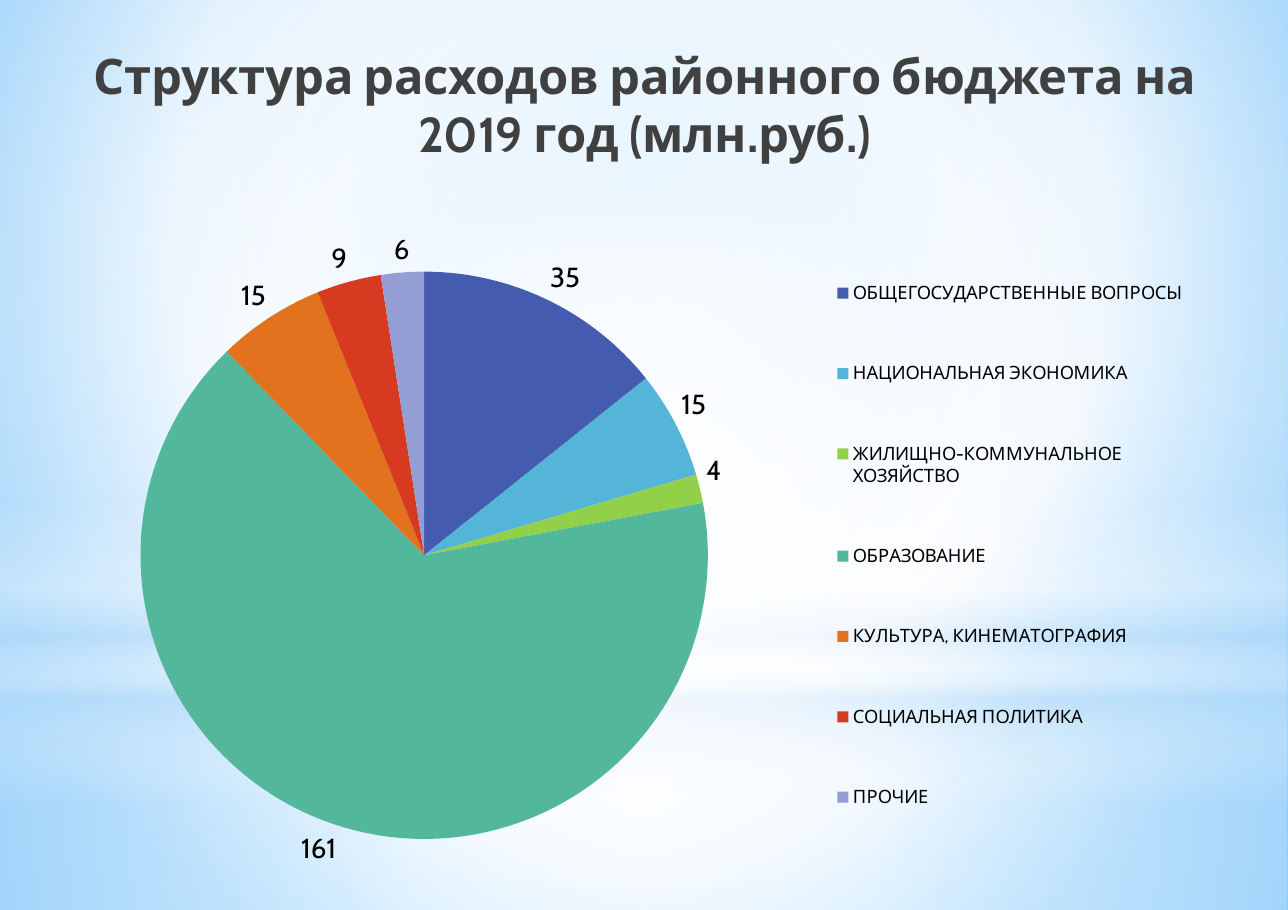
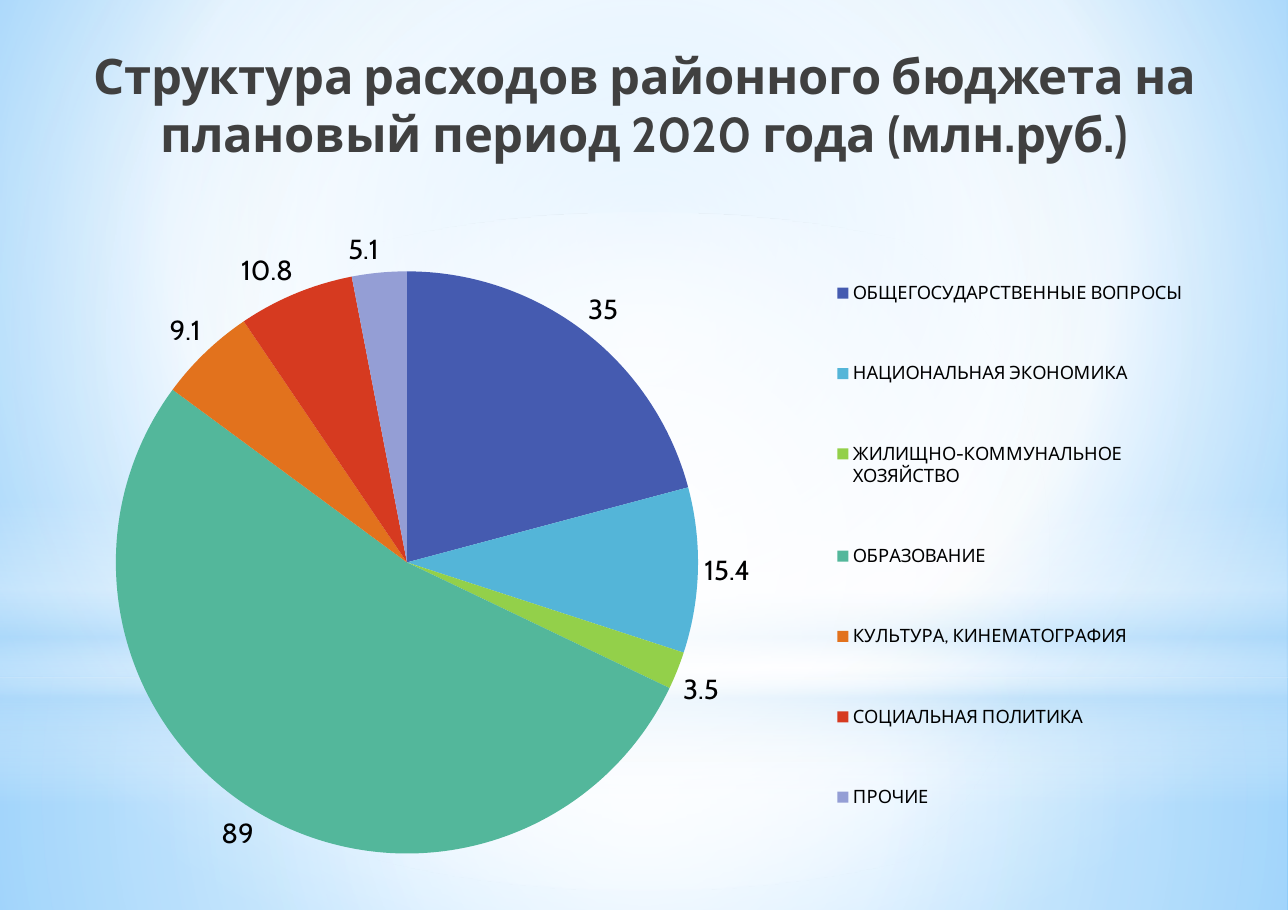
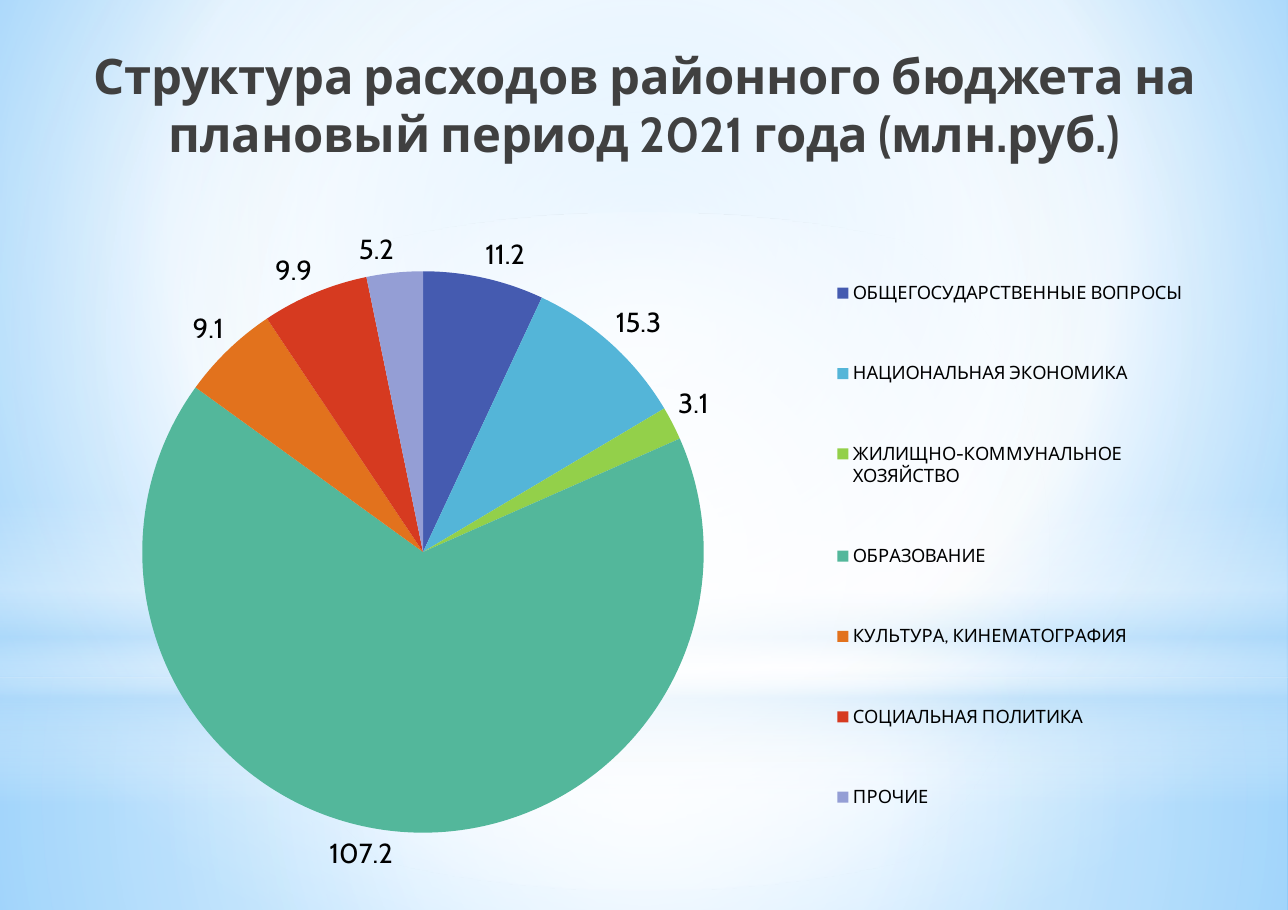
from lxml import etree
from pptx import Presentation
from pptx.chart.data import CategoryChartData
from pptx.dml.color import RGBColor
from pptx.enum.chart import XL_CHART_TYPE, XL_LABEL_POSITION, XL_LEGEND_POSITION
from pptx.enum.shapes import MSO_SHAPE
from pptx.enum.text import MSO_ANCHOR, PP_ALIGN
from pptx.oxml.ns import qn
from pptx.util import Inches, Pt

PIE = XL_CHART_TYPE.PIE
OUTSIDE = XL_LABEL_POSITION.OUTSIDE_END
RIGHT = XL_LEGEND_POSITION.RIGHT
RECT, OVAL = MSO_SHAPE.RECTANGLE, MSO_SHAPE.OVAL
MIDDLE, CENTER = MSO_ANCHOR.MIDDLE, PP_ALIGN.CENTER

FONT = "Cabin"
WIDE, HIGH = 11.69, 8.26
COLORS = {
    "title": "404040", "text": "000000", "white": "FFFFFF",
    "pale": "B4DCFA", "sky": "9ED5FF", "blue": "5BB9FF",
}

# Spending groups and their slice colours
GROUPS = {
    "ОБЩЕГОСУДАРСТВЕННЫЕ ВОПРОСЫ": "455BB0",
    "НАЦИОНАЛЬНАЯ ЭКОНОМИКА": "54B5D8",
    "ЖИЛИЩНО-КОММУНАЛЬНОЕ ХОЗЯЙСТВО": "93D04A",
    "ОБРАЗОВАНИЕ": "53B79B",
    "КУЛЬТУРА, КИНЕМАТОГРАФИЯ": "E2721D",
    "СОЦИАЛЬНАЯ ПОЛИТИКА": "D63A20",
    "ПРОЧИЕ": "949ED5",
}

# Title ending and values for each year
YEARS = [
    ("2019 год", [35, 15, 4, 161, 15, 9, 6]),
    ("плановый период 2020 года", [35, 15.4, 3.5, 89, 9.1, 10.8, 5.1]),
    ("плановый период 2021 года", [11.2, 15.3, 3.1, 107.2, 9.1, 9.9, 5.2]),
]

# Backdrop bands: shape, top, height, stops (place, colour, opacity), round
BANDS = [
    (RECT, 6.15, 2.11,
     [(0, "white", 91), (37, "white", 76), (100, "pale", 79)], True),
    (RECT, 0, 6.15,
     [(0, "white", 89), (48, "white", 62), (100, "pale", 79)], True),
    (RECT, 4.54, 2.75,
     [(0, "white", 0), (29, "white", 30), (45, "pale", 40),
      (55, "white", 26), (65, "pale", 60), (100, "white", 0)], False),
    (OVAL, 1.93, 6.15, [(0, "white", 100), (56, "white", 0)], True),
]


def rgb(name):
    return RGBColor.from_string(COLORS[name])


def blend(stops, focus=None):
    """Gradient fill: round about focus (l, t, r, b), or downward."""
    grad = etree.Element(qn("a:gradFill"), rotWithShape="1")
    items = etree.SubElement(grad, qn("a:gsLst"))
    for place, name, alpha in stops:
        stop = etree.SubElement(items, qn("a:gs"), pos=str(place * 1000))
        color = etree.SubElement(stop, qn("a:srgbClr"), val=COLORS[name])
        if alpha < 100:
            etree.SubElement(color, qn("a:alpha"), val=str(alpha * 1000))
    if focus:
        path = etree.SubElement(grad, qn("a:path"), path="circle")
        sides = {side: str(n * 1000) for side, n in zip("ltrb", focus)}
        etree.SubElement(path, qn("a:fillToRect"), sides)
    else:
        etree.SubElement(grad, qn("a:lin"), ang="5400000", scaled="0")
    return grad


def swap(parent, grad):
    old = parent.find(qn("a:solidFill"))
    parent.replace(old, grad)


def add_back(layout, slide):
    """Draw the backdrop once and keep it on the layout."""
    layout.background.fill.solid()
    stops = [(0, "sky", 100), (60, "white", 100), (100, "blue", 100)]
    page = next(layout.element.iter(qn("p:bgPr")))
    swap(page, blend(stops, (20, 10, 20, 60)))
    for kind, top, height, stops, is_round in BANDS:
        band = slide.shapes.add_shape(
            kind, 0, Inches(top), Inches(WIDE), Inches(height))
        band.shadow.inherit = False
        band.line.fill.background()
        band.fill.solid()
        swap(band.element.spPr, blend(stops, (50,) * 4 if is_round else None))
        layout.shapes.element.append(band.element)


def add_title(slide, text):
    box = slide.shapes.add_textbox(
        Inches(0.35), Inches(0.32), Inches(11), Inches(1.25))
    frame = box.text_frame
    frame.word_wrap = True
    frame.vertical_anchor = MIDDLE
    frame.margin_left = frame.margin_right = Inches(0.11)
    frame.margin_top = frame.margin_bottom = Inches(0.06)
    line = frame.paragraphs[0]
    line.alignment = CENTER
    line.line_spacing = Pt(38)
    font = line.font
    font.name, font.size, font.bold = FONT, Pt(32), True
    font.color.rgb = rgb("title")
    run = line.add_run()
    run.text = text
    run.font.language_id = None
    run._r.get_or_add_rPr().set("spc", "-20")


def place_key(legend, **area):
    """Fix the legend area, in shares of the chart."""
    root = legend._element
    for old in root.findall(qn("c:layout")):
        root.remove(old)
    layout = etree.Element(qn("c:layout"))
    manual = etree.SubElement(layout, qn("c:manualLayout"))
    for mode in ("xMode", "yMode"):
        etree.SubElement(manual, qn("c:" + mode), val="edge")
    for side, share in area.items():
        etree.SubElement(manual, qn("c:" + side), val=str(share))
    root.find(qn("c:legendPos")).addnext(layout)


def style(font, size):
    font.name, font.size = FONT, Pt(size)
    font.color.rgb = rgb("text")


def add_pie(slide, values):
    data = CategoryChartData()
    data.categories = list(GROUPS)
    data.add_series("Series 1", values)
    chart = slide.shapes.add_chart(
        PIE, Inches(0.26), Inches(1.97), Inches(10.67), Inches(6.08),
        data).chart
    chart.has_title = False
    style(chart.font, 18)

    # Slices and their values
    plot = chart.plots[0]
    plot.vary_by_categories = True
    for n, color in enumerate(GROUPS.values()):
        fill = plot.series[0].points[n].format.fill
        fill.solid()
        fill.fore_color.rgb = RGBColor.from_string(color)
    plot.has_data_labels = True
    labels = plot.data_labels
    labels.show_value = True
    labels.position = OUTSIDE
    style(labels.font, 18)

    # Legend
    chart.has_legend = True
    legend = chart.legend
    legend.position = RIGHT
    legend.include_in_layout = False
    style(legend.font, 12)
    place_key(legend, x=0.68, y=0.01, w=0.31, h=0.96)


def main():
    deck = Presentation()
    deck.slide_width, deck.slide_height = Inches(WIDE), Inches(HIGH)
    blank = deck.slide_layouts[6]
    for n, (year, values) in enumerate(YEARS):
        slide = deck.slides.add_slide(blank)
        if n == 0:
            add_back(blank, slide)
        add_title(
            slide, f"Структура расходов районного бюджета на {year} (млн.руб.)")
        add_pie(slide, values)
    deck.save("out.pptx")


if __name__ == "__main__":
    main()
